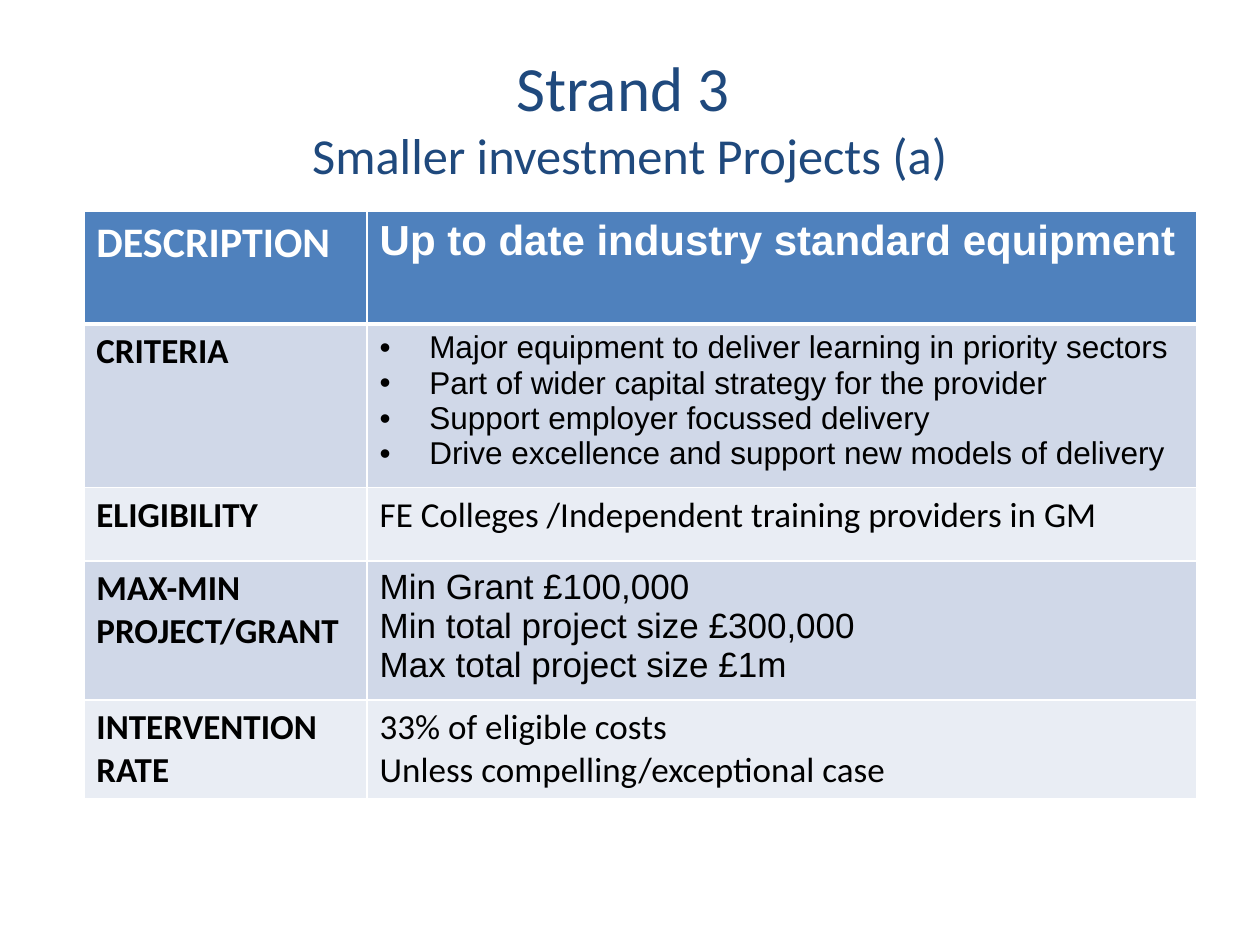
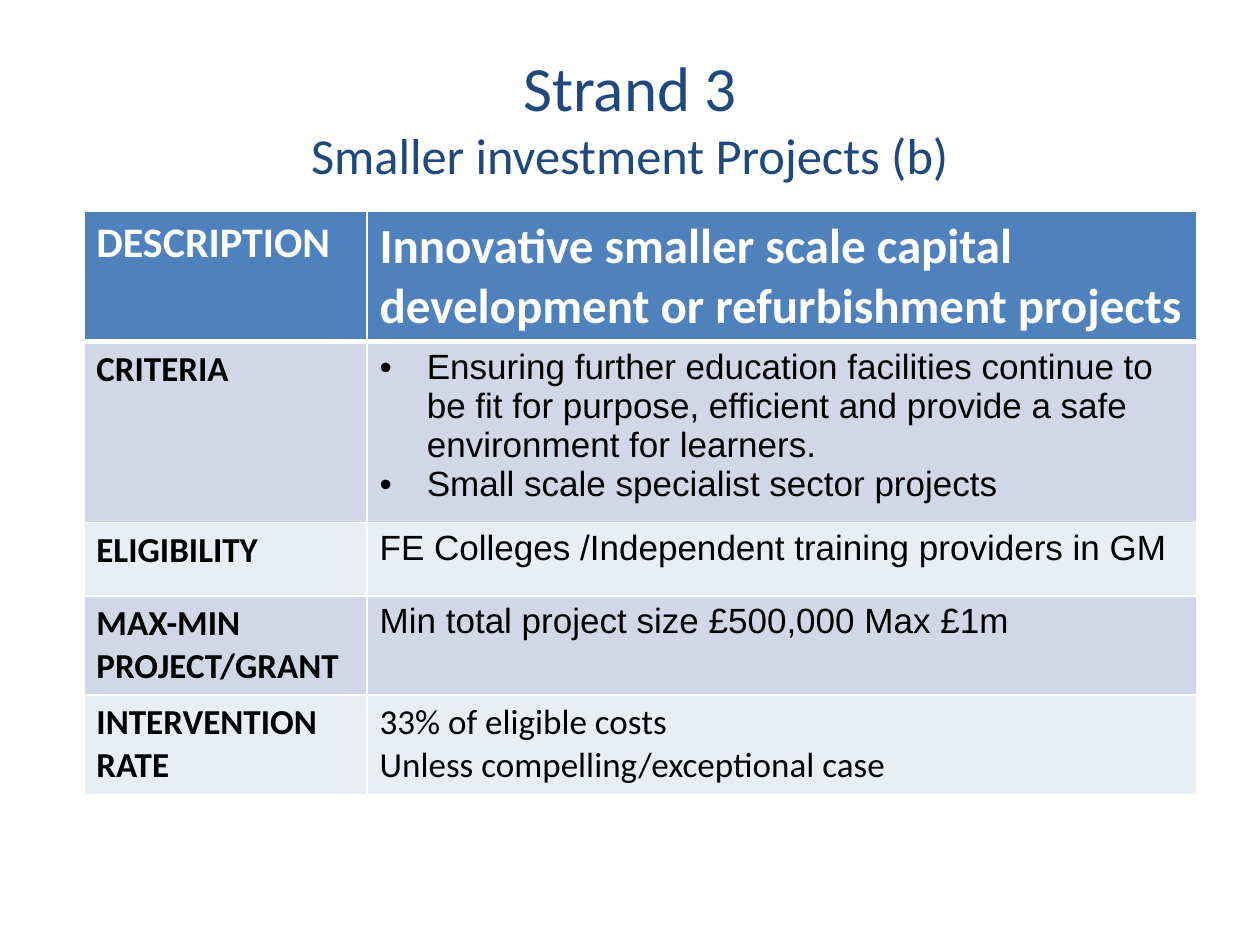
from dataclasses import dataclass

from lxml.etree import SubElement
from pptx import Presentation
from pptx.dml.color import RGBColor
from pptx.enum.text import MSO_ANCHOR, PP_ALIGN
from pptx.oxml.ns import qn
from pptx.util import Cm, Pt

WHITE, BLACK, NAVY = "FFFFFF", "000000", "1F497D"
HEADER_FILL, ODD_FILL, EVEN_FILL = "4F81BD", "D0D8E8", "E9EDF4"
BODY_FONT, ALTERNATE_FONT = "Calibri", "Arial"

# Boxes in cm: left, top, width, height
TITLE_BOX = (1.27, 0.76, 22.86, 3.18)
TABLE_BOX = (1.69, 4.25, 22.43, 11.5)
LABEL_WIDTH = 5.71
LABELS = ["DESCRIPTION", "CRITERIA", "ELIGIBILITY",
          "MAX-MIN PROJECT/GRANT", "INTERVENTION RATE"]


@dataclass
class Entry:
    """Text of one table cell."""
    lines: list
    font: str = BODY_FONT
    size: float = 20
    bold: bool = False
    bullet_indent: float = 0


PROVIDERS = ["FE Colleges /Independent training providers in GM"]
INTERVENTION = Entry(["33% of eligible costs", "Unless compelling/exceptional case"])

SLIDES = [
    {
        "title": ("Strand 3 ", "Smaller investment Projects (a)"),
        "heights": [2.28, 3.12, 1.48, 2.62, 2.0],
        "entries": [
            Entry(["Up to date industry standard equipment"], ALTERNATE_FONT, 24, True),
            Entry(["Major equipment to deliver learning in priority sectors",
                   "Part of wider capital strategy for the provider",
                   "Support employer focussed delivery",
                   "Drive excellence and support new models of delivery"],
                  ALTERNATE_FONT, 18, bullet_indent=1),
            Entry(PROVIDERS),
            Entry(["Min Grant £100,000", "Min total project size £300,000",
                   "Max total project size £1m"], ALTERNATE_FONT),
            INTERVENTION,
        ],
    },
    {
        "title": ("Strand 3", "Smaller investment Projects (b)"),
        "heights": [2.64, 3.42, 1.48, 2.0, 2.0],
        "entries": [
            Entry(["Innovative smaller scale capital development or refurbishment projects"],
                  size=28, bold=True),
            Entry(["Ensuring further education facilities continue to be fit for purpose, "
                   "efficient and provide a safe environment for learners.",
                   "Small scale specialist sector projects"],
                  ALTERNATE_FONT, bullet_indent=0.95),
            Entry(PROVIDERS, ALTERNATE_FONT),
            Entry(["Min total project size £500,000 Max £1m"], ALTERNATE_FONT),
            INTERVENTION,
        ],
    },
]


def rgb(value):
    return RGBColor.from_string(value)


def set_font(font, name, size, color, bold=False):
    font.name, font.size, font.bold = name, Pt(size), bold
    font.color.rgb = rgb(color)


def add_bullet(paragraph, indent):
    properties = paragraph._p.get_or_add_pPr()
    properties.set("marL", str(Cm(indent)))
    properties.set("indent", str(-Cm(indent)))
    SubElement(properties, qn("a:buFont"), typeface="Arial")
    SubElement(properties, qn("a:buChar"), char="•")


def set_borders(cell, top, bottom):
    properties = cell._tc.get_or_add_tcPr()
    for side, width in (("L", 1), ("R", 1), ("T", top), ("B", bottom)):
        line = SubElement(properties, qn(f"a:ln{side}"), w=str(Pt(width)))
        fill = SubElement(line, qn("a:solidFill"))
        SubElement(fill, qn("a:srgbClr"), val=WHITE)


def add_title(slide, box, heading, subtitle):
    frame = slide.shapes.add_textbox(*map(Cm, box)).text_frame
    frame.word_wrap = True
    frame.vertical_anchor = MSO_ANCHOR.MIDDLE
    paragraph = frame.paragraphs[0]
    paragraph.alignment = PP_ALIGN.CENTER
    for text, size in ((heading, 36), (subtitle, 28.8)):
        if paragraph.runs:
            paragraph.add_line_break()
        run = paragraph.add_run()
        run.text = text
        set_font(run.font, BODY_FONT, size, NAVY)


def fill_cell(cell, entry, row_index):
    header = row_index == 0
    set_borders(cell, 3 if row_index == 1 else 1, 3 if header else 1)
    cell.fill.solid()
    fill = HEADER_FILL if header else ODD_FILL if row_index % 2 else EVEN_FILL
    cell.fill.fore_color.rgb = rgb(fill)

    cell.text_frame.text = "\n".join(entry.lines)
    for paragraph in cell.text_frame.paragraphs:
        set_font(paragraph.font, entry.font, entry.size,
                 WHITE if header else BLACK, entry.bold)
        if entry.bullet_indent:
            add_bullet(paragraph, entry.bullet_indent)


def add_criteria_table(slide, box, heights, entries):
    table = slide.shapes.add_table(len(LABELS), 2, *map(Cm, box)).table
    table.first_row = table.horz_banding = False
    table.columns[0].width = Cm(LABEL_WIDTH)
    table.columns[1].width = Cm(box[2] - LABEL_WIDTH)
    for index, (label, height, entry) in enumerate(zip(LABELS, heights, entries)):
        table.rows[index].height = Cm(height)
        label_entry = Entry([label], size=20 if index else 24, bold=True)
        fill_cell(table.cell(index, 0), label_entry, index)
        fill_cell(table.cell(index, 1), entry, index)


def main():
    presentation = Presentation()
    presentation.slide_width, presentation.slide_height = Cm(25.4), Cm(19.05)
    for content in SLIDES:
        slide = presentation.slides.add_slide(presentation.slide_layouts[6])
        add_title(slide, TITLE_BOX, *content["title"])
        add_criteria_table(slide, TABLE_BOX, content["heights"], content["entries"])
    presentation.save("out.pptx")


if __name__ == "__main__":
    main()
